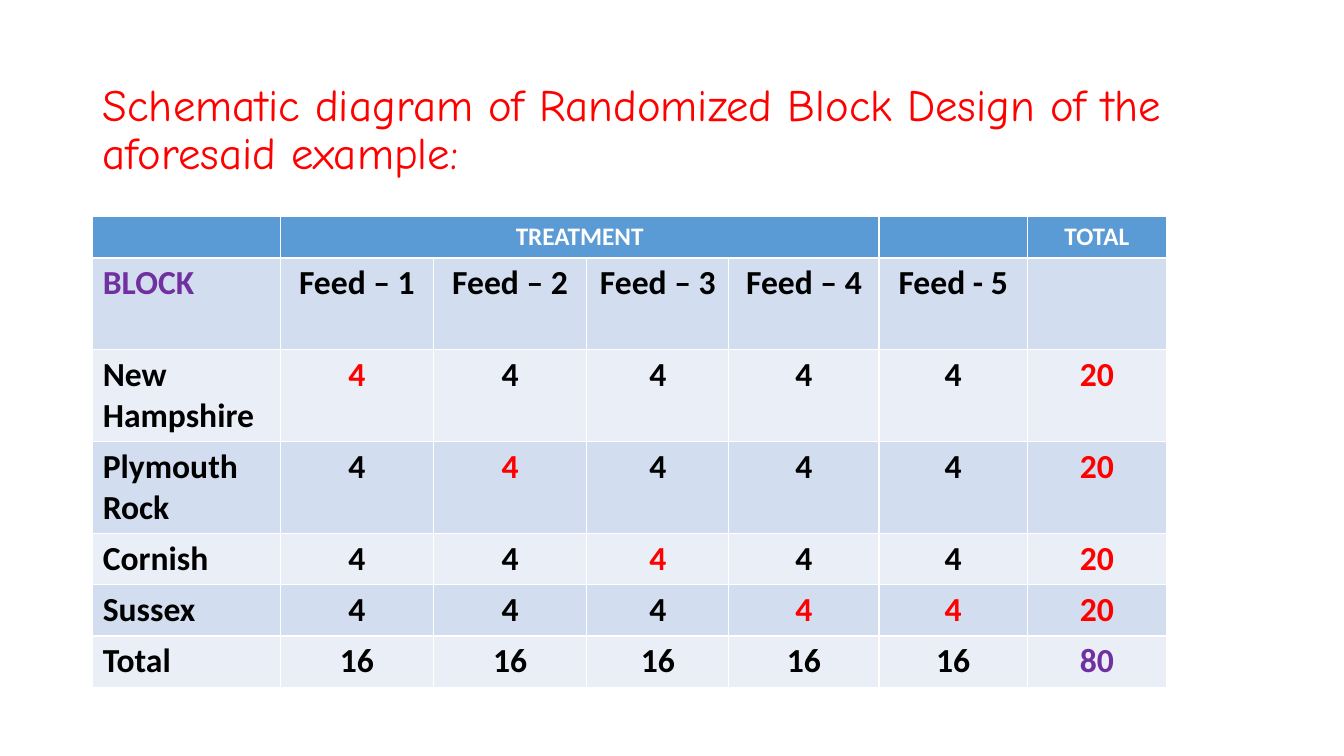
from pptx import Presentation
from pptx.dml.color import RGBColor
from pptx.enum.text import PP_ALIGN
from pptx.util import Inches, Pt

RED = RGBColor(0xFF, 0x00, 0x00)
PURPLE = RGBColor(0x70, 0x30, 0xA0)
BLACK = RGBColor(0x00, 0x00, 0x00)
WHITE = RGBColor(0xFF, 0xFF, 0xFF)
HEADER_BLUE = RGBColor(0x5B, 0x9B, 0xD5)
BANDS = [RGBColor(0xEA, 0xEF, 0xF7), RGBColor(0xD2, 0xDE, 0xEF)]

prs = Presentation()
prs.slide_width = Inches(13.33)
prs.slide_height = Inches(7.5)
slide = prs.slides.add_slide(prs.slide_layouts[6])

heading = slide.shapes.add_textbox(
    Inches(0.92), Inches(0.77), Inches(11.5), Inches(5.98)).text_frame
heading.word_wrap = True
heading_line = heading.paragraphs[0]
heading_line.text = "Schematic diagram of Randomized Block Design of the aforesaid example:"
heading_line.line_spacing = 0.9
heading_format = {"name": "Comic Neue", "size": Pt(32)}
for attribute, value in heading_format.items():
    setattr(heading_line.font, attribute, value)
heading_line.font.color.rgb = RED

breeds = ["New Hampshire", "Plymouth Rock", "Cornish", "Sussex"]
design = [
    ["", "TREATMENT", "", "", "", "", "TOTAL"],
    ["BLOCK", "Feed – 1", "Feed – 2", "Feed – 3", "Feed – 4", "Feed - 5", ""],
    *[[breed] + ["4"] * 5 + ["20"] for breed in breeds],
    ["Total"] + ["16"] * 5 + ["80"],
]
column_widths = [1.86, 1.52, 1.52, 1.41, 1.49, 1.47, 1.38]
row_heights = [0.41, 0.91, 0.91, 0.91, 0.51, 0.51, 0.51]
highlights = {(1, 0): PURPLE, (6, 6): PURPLE, (5, 5): RED}
for block in range(len(breeds)):
    highlights[block + 2, block + 1] = RED
    highlights[block + 2, 6] = RED

table = slide.shapes.add_table(
    len(design), len(column_widths), Inches(0.92), Inches(2.15),
    Inches(sum(column_widths)), Inches(sum(row_heights))).table
for column, width in zip(table.columns, column_widths):
    column.width = Inches(width)
for row, height in zip(table.rows, row_heights):
    row.height = Inches(height)
table.cell(0, 1).merge(table.cell(0, 4))

for r, entries in enumerate(design):
    for c, entry in enumerate(entries):
        cell = table.cell(r, c)
        cell.fill.solid()
        cell.fill.fore_color.rgb = BANDS[r % 2] if r else HEADER_BLUE
        if not entry:
            continue
        cell.text = entry
        line = cell.text_frame.paragraphs[0]
        line.alignment = PP_ALIGN.CENTER if c else PP_ALIGN.LEFT
        cell_format = {"name": "Calibri", "size": Pt(24 if r else 18), "bold": True}
        for attribute, value in cell_format.items():
            setattr(line.font, attribute, value)
        line.font.color.rgb = highlights.get((r, c), BLACK if r else WHITE)

prs.save("out.pptx")
